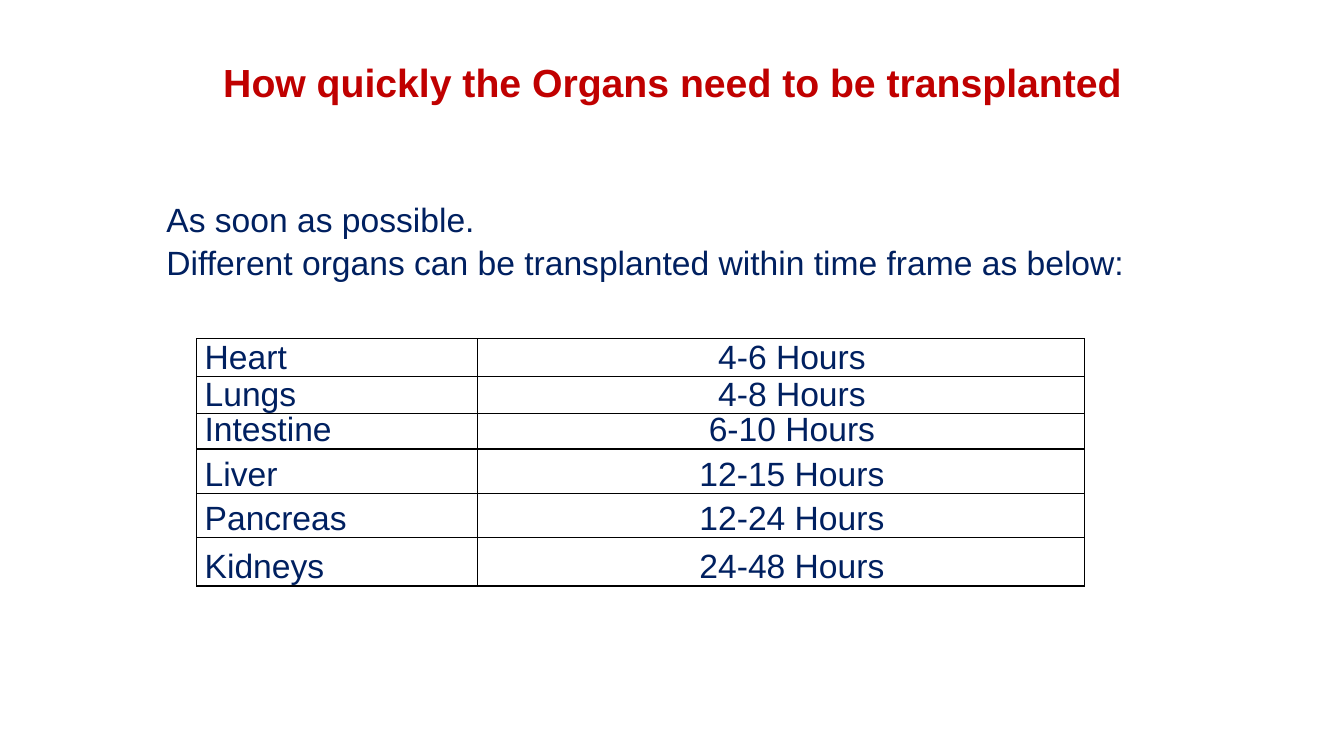
from dataclasses import dataclass

from lxml import etree
from pptx import Presentation
from pptx import util as u
from pptx.dml.color import RGBColor
from pptx.enum import text
from pptx.oxml import ns

TITLE = "How quickly the Organs need to be transplanted"
INTRO = [
    "As soon as possible.",
    "Different organs can be transplanted within time frame as below:",
]
# organ, time frame, row height in px, tight line spacing
ORGANS = [
    ("Heart", "4-6 Hours", 37, False),
    ("Lungs", "4-8 Hours", 37, False),
    ("Intestine", "6-10 Hours", 35, True),
    ("Liver", "12-15 Hours", 44, False),
    ("Pancreas", "12-24 Hours", 44, True),
    ("Kidneys", "24-48 Hours", 48, False),
]
# column width in px, left indent in px, alignment
COLUMNS = [
    (279, 8, text.PP_ALIGN.LEFT),
    (602, 21, text.PP_ALIGN.CENTER),
]
SLIDE_SIZE = (1333, 750)
TITLE_BOX = (92, 40, 1150, 89)
INTRO_BOX = (105, 95, 1083, 215)
INTRO_TOP = 102
INTRO_INDENT = 50
TABLE_ORIGIN = (195, 336)


@dataclass(frozen=True)
class Theme:
    font: str = "Arial"
    title_color: str = "C00000"
    body_color: str = "002060"
    cell_color: str = "FFFFFF"
    border_color: str = "000000"
    title_size: int = 28
    body_size: int = 24
    border_width: int = 1
    tight_spacing: float = 13.7


THEME = Theme()


def px(length):
    """Convert px, at 100 to the inch, to EMU."""
    return u.Emu(length * 9144)


def place(shape, box):
    shape.left, shape.top, shape.width, shape.height = map(px, box)


def format_runs(paragraph, size, color, bold=False):
    for run in paragraph.runs:
        run.font.name = THEME.font
        run.font.size = u.Pt(size)
        run.font.bold = bold
        run.font.color.rgb = RGBColor.from_string(color)


def indent(paragraph, left):
    """Indent the whole paragraph and remove its bullet."""
    properties = paragraph._p.get_or_add_pPr()
    properties.set("marL", str(px(left)))
    properties.set("indent", "0")
    etree.SubElement(properties, ns.qn("a:buNone"))


def add_borders(cell):
    properties = cell._tc.get_or_add_tcPr()
    for position, side in enumerate(("lnL", "lnR", "lnT", "lnB")):
        line = etree.Element(ns.qn(f"a:{side}"), w=str(u.Pt(THEME.border_width)))
        fill = etree.SubElement(line, ns.qn("a:solidFill"))
        etree.SubElement(fill, ns.qn("a:srgbClr"), val=THEME.border_color)
        properties.insert(position, line)


def fill_title(title):
    place(title, TITLE_BOX)
    frame = title.text_frame
    frame.text = TITLE
    frame.auto_size = text.MSO_AUTO_SIZE.NONE
    frame.vertical_anchor = text.MSO_ANCHOR.MIDDLE
    paragraph = frame.paragraphs[0]
    paragraph.alignment = text.PP_ALIGN.CENTER
    paragraph.line_spacing = 0.9
    format_runs(paragraph, THEME.title_size, THEME.title_color, bold=True)


def fill_intro(body):
    place(body, INTRO_BOX)
    frame = body.text_frame
    frame.text = "\n".join(INTRO)
    frame.auto_size = text.MSO_AUTO_SIZE.NONE
    frame.vertical_anchor = text.MSO_ANCHOR.TOP
    frame.margin_top = px(INTRO_TOP)
    for paragraph in frame.paragraphs:
        paragraph.level = 1
        paragraph.space_before = u.Pt(0)
        paragraph.space_after = u.Pt(2)
        indent(paragraph, INTRO_INDENT)
        format_runs(paragraph, THEME.body_size, THEME.body_color)


def fill_cell(cell, wording, left, alignment, tight):
    cell.fill.solid()
    cell.fill.fore_color.rgb = RGBColor.from_string(THEME.cell_color)
    cell.margin_left = cell.margin_right = cell.margin_top = cell.margin_bottom = 0
    cell.vertical_anchor = text.MSO_ANCHOR.BOTTOM
    add_borders(cell)
    cell.text_frame.text = wording
    paragraph = cell.text_frame.paragraphs[0]
    paragraph.alignment = alignment
    if tight:
        paragraph.line_spacing = u.Pt(THEME.tight_spacing)
    indent(paragraph, left)
    format_runs(paragraph, THEME.body_size, THEME.body_color)


def add_organ_table(slide):
    width = sum(column[0] for column in COLUMNS)
    height = sum(organ[2] for organ in ORGANS)
    box = map(px, (*TABLE_ORIGIN, width, height))
    table = slide.shapes.add_table(len(ORGANS), len(COLUMNS), *box).table
    table.first_row = table.horz_banding = False
    for column, (column_width, _, _) in zip(table.columns, COLUMNS):
        column.width = px(column_width)
    for row, (organ, hours, row_height, tight) in zip(table.rows, ORGANS):
        row.height = px(row_height)
        for cell, wording, (_, left, alignment) in zip(row.cells, (organ, hours), COLUMNS):
            fill_cell(cell, wording, left, alignment, tight)


def main():
    presentation = Presentation()
    presentation.slide_width, presentation.slide_height = map(px, SLIDE_SIZE)
    slide = presentation.slides.add_slide(presentation.slide_layouts[1])
    fill_title(slide.shapes.title)
    fill_intro(slide.placeholders[1])
    add_organ_table(slide)
    presentation.save("out.pptx")


if __name__ == "__main__":
    main()
